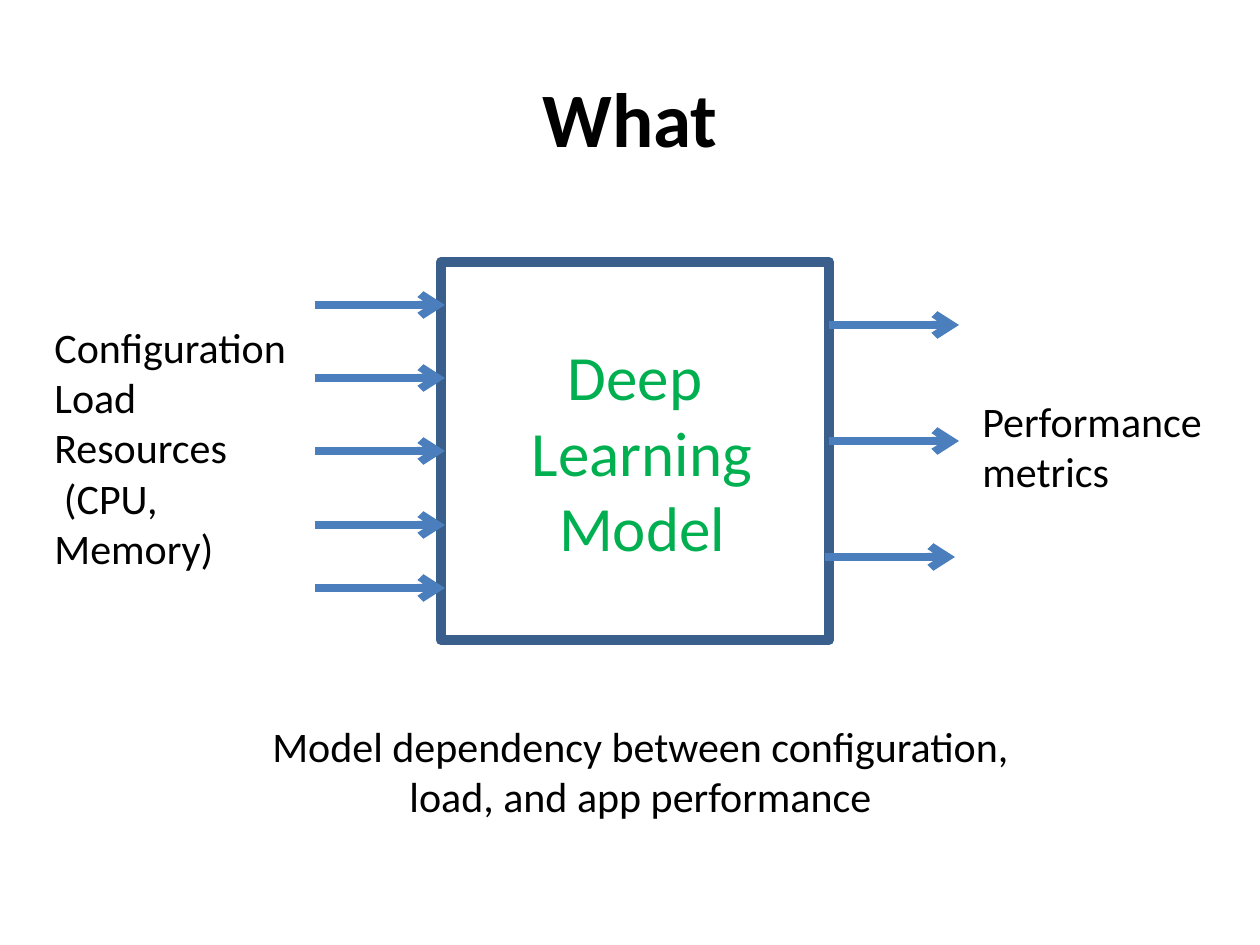
from lxml import etree
from pptx import Presentation
from pptx.dml.color import RGBColor
from pptx.enum.shapes import MSO_CONNECTOR, MSO_SHAPE
from pptx.enum.text import MSO_ANCHOR, PP_ALIGN
from pptx.oxml.ns import qn
from pptx.util import Pt

PX_PER_INCH = 126
FONT = "Calibri"
COLORS = {
    "text": "000000",
    "model_text": "00B050",
    "model_fill": "FFFFFF",
    "model_border": "3A5F8C",
    "arrow": "4B7EBC",
}


def px(length):
    return round(length * 914400 / PX_PER_INCH)


def rgb(name):
    return RGBColor.from_string(COLORS[name])


def write(frame, lines, size, color="text", bold=False,
          align=PP_ALIGN.LEFT, anchor=MSO_ANCHOR.TOP):
    """Fill a text frame with one paragraph per line."""
    frame.word_wrap = True
    frame.vertical_anchor = anchor
    for index, line in enumerate(lines):
        paragraph = frame.add_paragraph() if index else frame.paragraphs[0]
        paragraph.alignment = align
        run = paragraph.add_run()
        run.text = line
        run.font.name = FONT
        run.font.size = Pt(size)
        run.font.bold = bold
        run.font.color.rgb = rgb(color)


def add_label(slide, box, lines, size=24, **style):
    label = slide.shapes.add_textbox(*map(px, box))
    write(label.text_frame, lines, size, **style)


def add_model(slide, box, lines):
    model = slide.shapes.add_shape(MSO_SHAPE.RECTANGLE, *map(px, box))
    model.shadow.inherit = False
    model.fill.solid()
    model.fill.fore_color.rgb = rgb("model_fill")
    model.line.color.rgb = rgb("model_border")
    model.line.width = Pt(6)
    write(model.text_frame, lines, 36, color="model_text",
          align=PP_ALIGN.CENTER, anchor=MSO_ANCHOR.MIDDLE)


def add_arrow(slide, left, y, length=130):
    """Draw a horizontal arrow pointing right."""
    arrow = slide.shapes.add_connector(
        MSO_CONNECTOR.STRAIGHT, px(left), px(y), px(left + length), px(y))
    arrow.line.color.rgb = rgb("arrow")
    arrow.line.width = Pt(4.5)
    etree.SubElement(arrow.line._get_or_add_ln(), qn("a:tailEnd"), type="arrow")
    etree.SubElement(arrow._element.spPr, qn("a:effectLst"))


def main():
    presentation = Presentation()
    presentation.slide_width = px(1260)
    presentation.slide_height = px(945)
    slide = presentation.slides.add_slide(presentation.slide_layouts[6])

    add_label(slide, (63, 38, 1134, 158), ["What"], size=44, bold=True,
              align=PP_ALIGN.CENTER, anchor=MSO_ANCHOR.MIDDLE)
    add_model(slide, (441, 262, 388, 378), ["Deep", " Learning", " Model"])

    for input_y in (305, 378, 451, 525, 588):
        add_arrow(slide, 315, input_y)
    for output_left, output_y in ((829, 325), (829, 441), (825, 557)):
        add_arrow(slide, output_left, output_y)

    add_label(slide, (42, 315, 284, 267),
              ["Configuration", "Load", "Resources", " (CPU, Memory)"])
    add_label(slide, (970, 389, 262, 115), ["Performance metrics"])
    add_label(slide, (252, 714, 777, 115),
              ["Model dependency between configuration, load, and app performance"],
              align=PP_ALIGN.CENTER)

    presentation.save("out.pptx")


if __name__ == "__main__":
    main()
